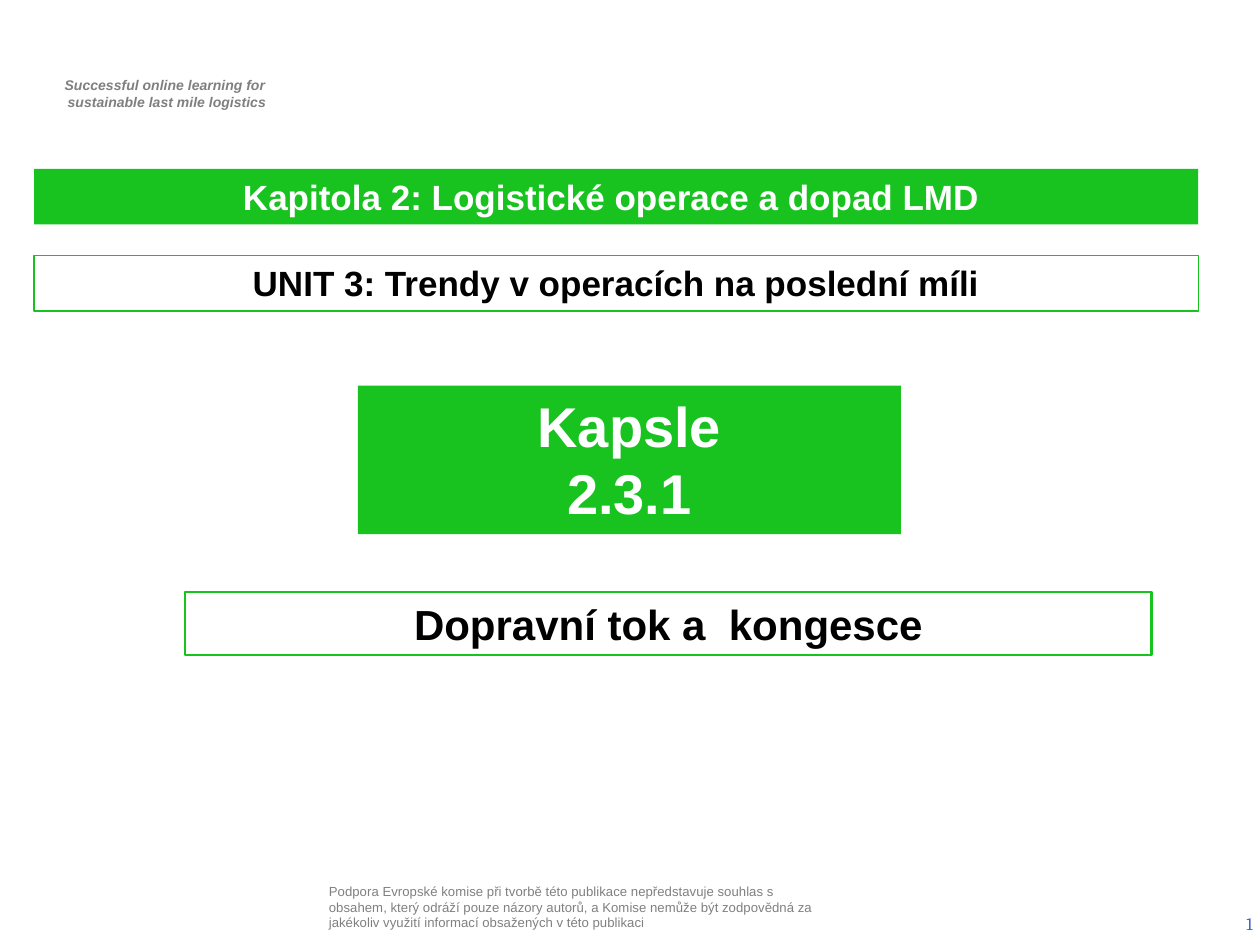
import pptx
import pptx.util
import pptx.dml.color
import pptx.enum.text

COLS, ROWS = 100, 75
CELL = pptx.util.Inches(0.1)
GREEN, WHITE, BLACK = "18C320", "FFFFFF", "000000"
ALIGN = pptx.enum.text.PP_ALIGN
ANCHOR = pptx.enum.text.MSO_ANCHOR


def tint(code):
    """Turn a hex string into a colour."""
    return pptx.dml.color.RGBColor.from_string(code)


def place(shape, box):
    """Set a shape on the grid."""
    shape.left, shape.top, shape.width, shape.height = (
        int(n * CELL) for n in box)


def write(shape, lines, size, color, align=ALIGN.CENTER, anchor=ANCHOR.TOP,
          pad=(0.1, 0.05), face="Arial", bold=False, italic=False):
    """Fill a shape with evenly formatted lines."""
    frame = shape.text_frame
    frame.word_wrap = True
    frame.auto_size = pptx.enum.text.MSO_AUTO_SIZE.NONE
    frame.vertical_anchor = anchor
    frame.margin_left = frame.margin_right = pptx.util.Inches(pad[0])
    frame.margin_top = frame.margin_bottom = pptx.util.Inches(pad[1])
    frame.text = "\n".join(lines)
    for para in frame.paragraphs:
        para.alignment = align
        font = para.font
        font.name, font.size = face, pptx.util.Pt(size)
        font.bold, font.italic = bold, italic
        font.color.rgb = tint(color)


def note(slide, box, lines, size, color, **style):
    """Add a plain text box."""
    shape = slide.shapes.add_textbox(0, 0, 0, 0)
    place(shape, box)
    write(shape, lines, size, color, **style)
    return shape


def panel(shape, box, lines, size, line=None):
    """Format a green panel, or an outlined one if a line width is given."""
    place(shape, box)
    if line:
        shape.fill.background()
        shape.line.color.rgb = tint(GREEN)
        shape.line.width = pptx.util.Pt(line)
    else:
        shape.fill.solid()
        shape.fill.fore_color.rgb = tint(GREEN)
        shape.line.fill.background()
    write(shape, lines, size, BLACK if line else WHITE, bold=True)


def head(slide, box):
    """Place the chapter title and the unit below it."""
    left, top, width, height = box
    bar = 4.4
    panel(slide.shapes.title, (left, top, width, bar),
          ["Kapitola 2: Logistické operace a dopad LMD "], 20)
    panel(block(slide), (left, top + height - bar, width, bar),
          ["UNIT 3: Trendy v operacích na poslední míli"], 20, 0.75)


def block(slide):
    """Add a rectangle without a shadow."""
    shape = slide.shapes.add_shape(
        pptx.enum.shapes.MSO_SHAPE.RECTANGLE, 0, 0, 0, 0)
    shape.shadow.inherit = False
    return shape


def topic(slide, box):
    """Place the capsule number above its subject."""
    left, top, width, height = box
    panel(block(slide), (left + 13.7, top, 43.1, 11.8),
          ["Kapsle", "2.3.1"], 32)
    panel(block(slide), (left, top + height - 5, width, 5),
          ["Dopravní tok a  kongesce"], 24, 1.5)


def foot(slide, box):
    """Place the disclaimer and the page number."""
    left, top, width, height = box
    note(slide, (left, top, 40.2, height),
         ["Podpora Evropské komise při tvorbě této publikace nepředstavuje "
          "souhlas s obsahem, který odráží pouze názory autorů, a Komise "
          "nemůže být zodpovědná za jakékoliv využití informací obsažených "
          "v této publikaci"],
         7.5, "808080", align=ALIGN.LEFT, pad=(0.04, 0.01))
    note(slide, (left + width - 23.3, top + 1.3, 23.3, 4), ["1"], 10,
         "3366CC", align=ALIGN.RIGHT, anchor=ANCHOR.MIDDLE, face="Cambria")


def main():
    """Build and save the slide."""
    deck = pptx.Presentation()
    deck.slide_width, deck.slide_height = COLS * CELL, ROWS * CELL
    slide = deck.slides.add_slide(deck.slide_layouts[5])
    motto = note(slide, (2.9, 5.6, 20.3, 3.7),
                 ["Successful online learning for ",
                  "sustainable last mile logistics"],
                 8, "7F7F7F", bold=True, italic=True)
    motto.text_frame.margin_left = pptx.util.Inches(0.14)
    head(slide, (2.7, 13.4, 92.4, 11.3))
    topic(slide, (14.7, 30.6, 76.7, 21.4))
    foot(slide, (25.7, 70, 74.7, 5))
    deck.save("out.pptx")


if __name__ == "__main__":
    main()
